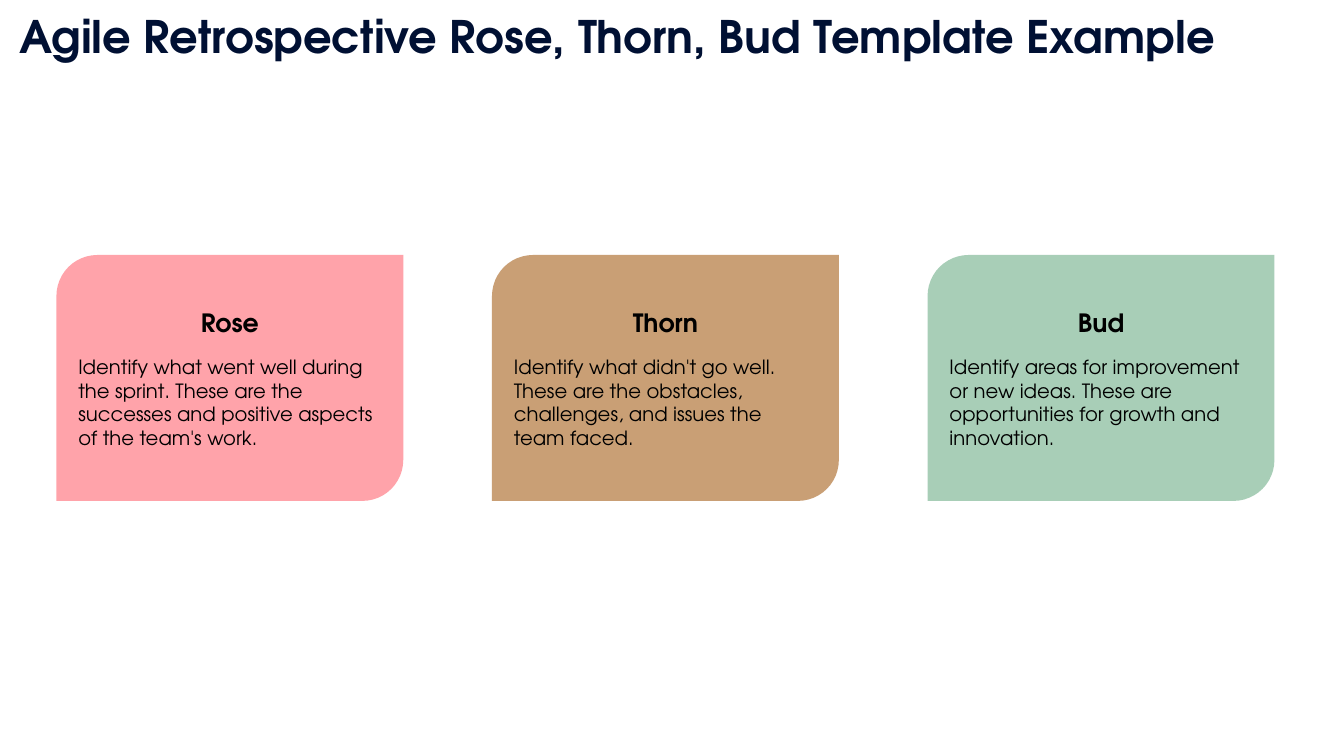
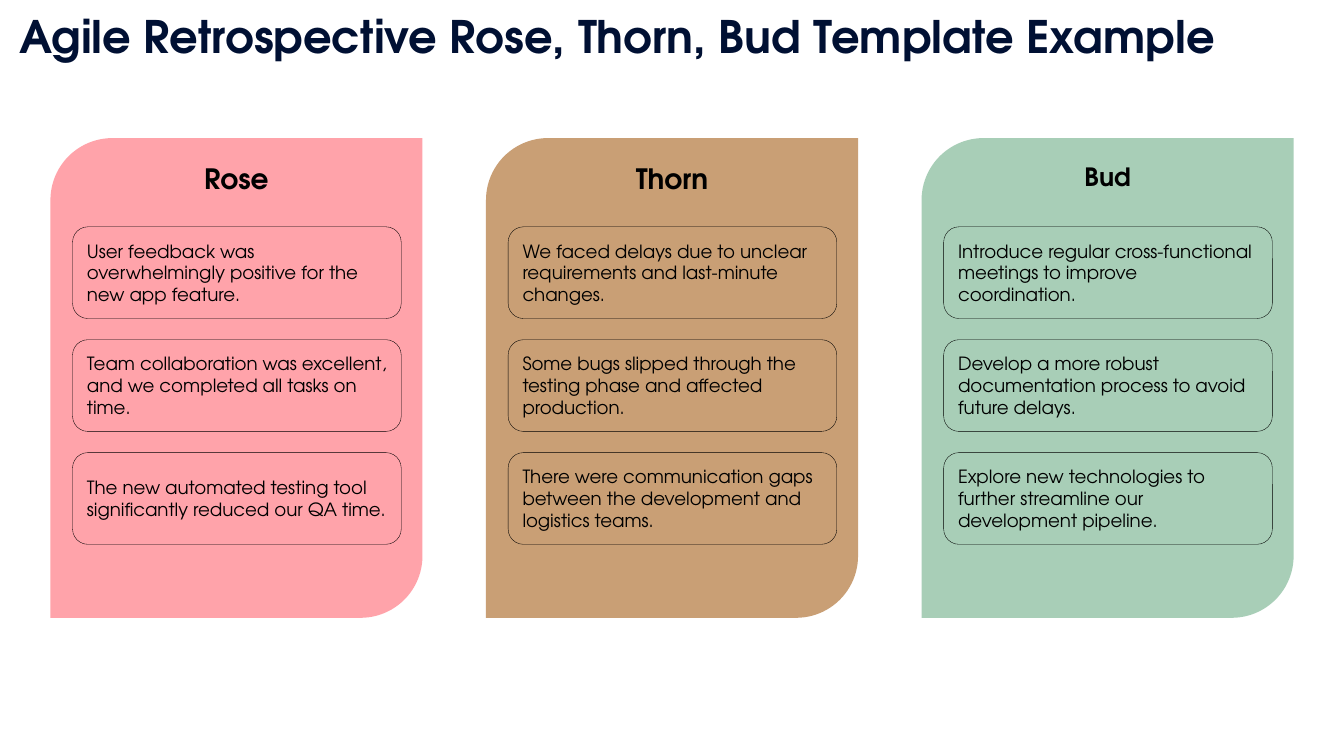
import lxml.etree
import pptx
import pptx.dml.color
import pptx.enum.shapes
import pptx.enum.text
import pptx.oxml.ns
import pptx.util

PX = 9144  # EMU per px, 100 px to the inch
KIND = pptx.enum.shapes.MSO_SHAPE
ALIGN = pptx.enum.text.PP_ALIGN
ANCHOR = pptx.enum.text.MSO_ANCHOR


class Theme:
    font = "TeX Gyre Adventor"
    navy, black = "001033", "000000"
    rose, thorn, bud = "FF7D86", "B3773B", "84BA99"
    alpha = 70
    title, large, head, body, note = 32, 20, 18, 14, 13


def style(para, text, size, bold=False, align=ALIGN.LEFT, color=Theme.black):
    para.text = text
    para.alignment = align
    para.font.name = Theme.font
    para.font.size = pptx.util.Pt(size)
    para.font.bold = bold
    para.font.color.rgb = pptx.dml.color.RGBColor.from_string(color)


def block(slide, kind, box, anchor, fill=None):
    """Add a see-through coloured card, or a thin outlined box if no fill is given."""
    shape = slide.shapes.add_shape(kind, *[n * PX for n in box])
    shape.shadow.inherit = False
    if fill:
        shape.fill.solid()
        shape.fill.fore_color.rgb = pptx.dml.color.RGBColor.from_string(fill)
        tint = shape.fill._xPr.find(".//" + pptx.oxml.ns.qn("a:srgbClr"))
        alpha = lxml.etree.SubElement(tint, pptx.oxml.ns.qn("a:alpha"))
        alpha.set("val", str(Theme.alpha * 1000))
        shape.line.fill.background()
    else:
        shape.fill.background()
        shape.line.color.rgb = pptx.dml.color.RGBColor.from_string(Theme.black)
        shape.line.width = pptx.util.Pt(0.25)
    shape.text_frame.word_wrap = True
    shape.text_frame.vertical_anchor = anchor
    return shape.text_frame


deck = pptx.Presentation()
deck.slide_width, deck.slide_height = 1333 * PX, 750 * PX

# Title shared by both slides
for _ in range(2):
    title = deck.slides.add_slide(deck.slide_layouts[5]).shapes.title
    title.left, title.top, title.width, title.height = [n * PX for n in (9, 4, 1224, 64)]
    frame = title.text_frame
    frame.word_wrap = True
    frame.auto_size = pptx.enum.text.MSO_AUTO_SIZE.NONE
    frame.vertical_anchor = ANCHOR.TOP
    style(frame.paragraphs[0], "Agile Retrospective Rose, Thorn, Bud Template Example",
          Theme.title, bold=True, color=Theme.navy)
guide, board = deck.slides

# Name, colour, heading size on the board, meaning, notes
topics = [
    ("Rose", Theme.rose, Theme.large,
     "Identify what went well during the sprint. These are the successes and positive "
     "aspects of the team's work.",
     ["User feedback was overwhelmingly positive for the new app feature.",
      "Team collaboration was excellent, and we completed all tasks on time.",
      "The new automated testing tool significantly reduced our QA time."]),
    ("Thorn", Theme.thorn, Theme.large,
     "Identify what didn't go well. These are the obstacles, challenges, and issues "
     "the team faced.",
     ["We faced delays due to unclear requirements and last-minute changes.",
      "Some bugs slipped through the testing phase and affected production.",
      "There were communication gaps between the development and logistics teams."]),
    ("Bud", Theme.bud, Theme.head,
     "Identify areas for improvement or new ideas. These are opportunities for growth "
     "and innovation.",
     ["Introduce regular cross-functional meetings to improve coordination.",
      "Develop a more robust documentation process to avoid future delays.",
      "Explore new technologies to further streamline our development pipeline."]),
]
STEP, PITCH = 432, 112  # column to column, note to note

for col, (name, color, size, text, notes) in enumerate(topics):
    shift = col * STEP

    # Slide 1: what each topic means
    card = block(guide, KIND.ROUND_2_DIAG_RECTANGLE, (56 + shift, 253, 344, 244),
                 ANCHOR.MIDDLE, color)
    style(card.paragraphs[0], name, Theme.head, bold=True, align=ALIGN.CENTER)
    para = card.add_paragraph()
    para.space_before = pptx.util.Pt(12.7)
    style(para, text, Theme.body)

    # Slide 2: the notes gathered under each topic
    card = block(board, KIND.ROUND_2_DIAG_RECTANGLE, (50 + shift, 137, 369, 476),
                 ANCHOR.TOP, color)
    style(card.paragraphs[0], name, size, bold=True, align=ALIGN.CENTER)
    for row, note in enumerate(notes):
        box = block(board, KIND.ROUNDED_RECTANGLE,
                    (72 + shift, 225 + row * PITCH, 326, 91), ANCHOR.MIDDLE)
        style(box.paragraphs[0], note, Theme.note)

deck.save("out.pptx")
